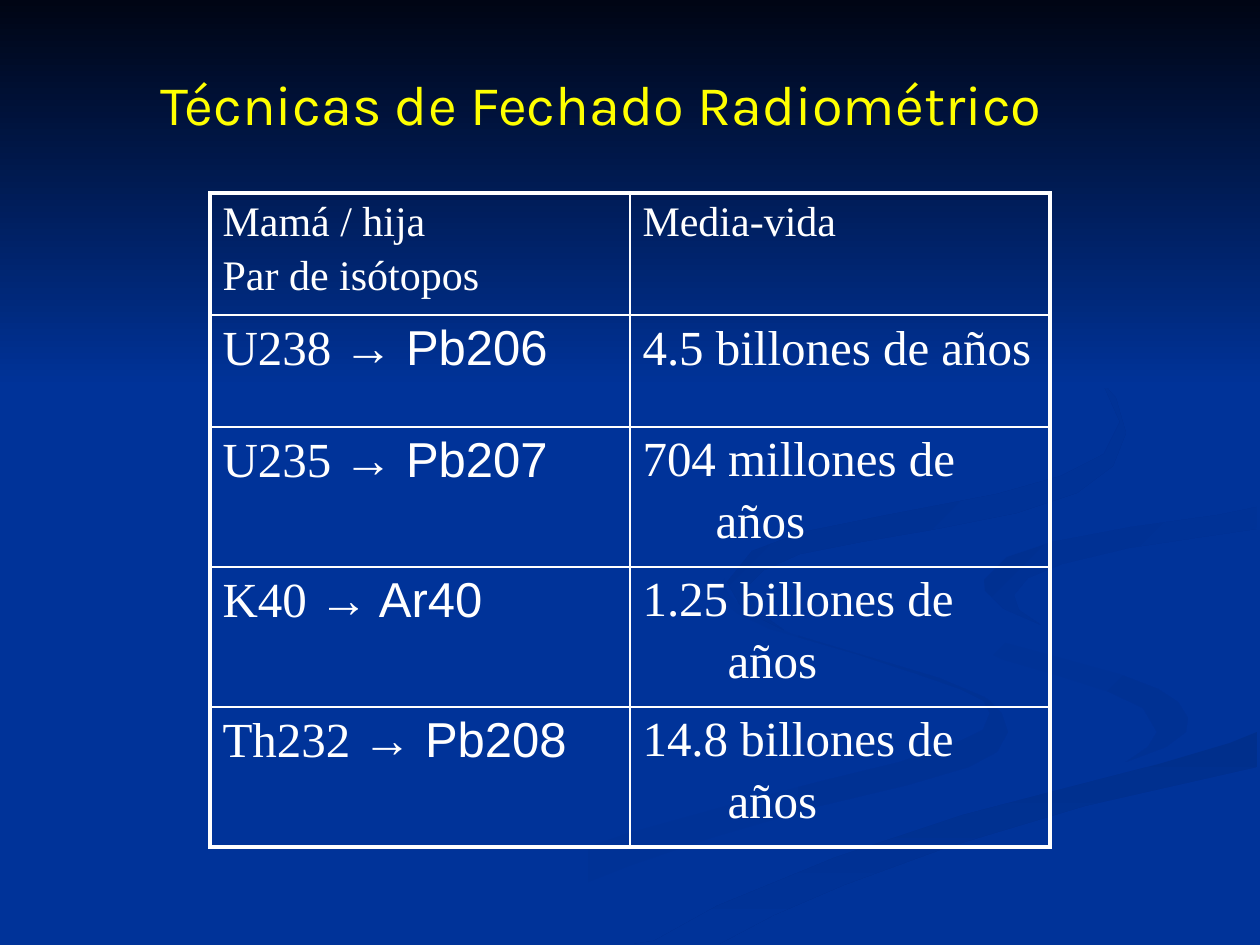
from lxml.etree import SubElement
from pptx import Presentation
from pptx.dml.color import RGBColor
from pptx.enum.text import MSO_ANCHOR, MSO_AUTO_SIZE, PP_ALIGN
from pptx.oxml.ns import qn
from pptx.util import Pt

PX = 914400 / 126
WHITE = "FFFFFF"
SERIF = "Times New Roman"
BLUE = "003399"


def rgb(code):
    return RGBColor.from_string(code)


def write(para, text, font=SERIF, size=28, color=WHITE, gap=0, indent=0):
    """Add a run to para, with gap in points before it and indent in px."""
    run = para.add_run()
    run.text = text
    run.font.name = font
    run.font.size = Pt(size)
    run.font.color.rgb = rgb(color)
    para.alignment = PP_ALIGN.LEFT
    para.space_before = Pt(gap)
    if indent:
        para._p.get_or_add_pPr().set("marL", str(round(indent * PX)))


deck = Presentation()
deck.slide_width = round(1260 * PX)
deck.slide_height = round(945 * PX)
slide = deck.slides.add_slide(deck.slide_layouts[5])
slide.background.fill.solid()
slide.background.fill.fore_color.rgb = rgb(BLUE)

# Ribbons and the dark band at the top: start colour, end colour, angle, outline
loop = [
    (984, 697), (939, 678), (859, 654), (789, 633), (748, 611), (730, 596),
    (723, 585), (725, 578), (718, 590), (721, 600), (738, 614), (770, 629),
    (856, 654), (917, 674), (960, 689), (984, 701), (990, 713), (983, 730),
    (956, 743), (900, 762), (822, 781), (730, 805), (629, 833), (525, 869),
    (426, 916), (378, 944), (455, 944), (543, 900), (629, 866), (711, 838),
    (820, 806), (908, 785), (969, 767), (997, 752), (1008, 732), (1002, 714),
    (990, 701)]
curl = [
    (1188, 718), (1178, 702), (1158, 689), (1119, 674), (1046, 654),
    (998, 641), (955, 627), (924, 609), (912, 585), (914, 597), (924, 615),
    (951, 636), (1004, 660), (1056, 675), (1109, 692), (1143, 708),
    (1157, 732), (1148, 747), (1126, 762), (1166, 747), (1186, 732)]
tail = [
    (654, 941), (634, 944), (719, 944), (774, 915), (844, 885), (948, 847),
    (1085, 806), (1257, 767), (1257, 732), (1230, 743), (1159, 764),
    (1047, 793), (963, 815), (834, 858), (717, 906)]
wing = [
    (984, 580), (985, 591), (1004, 609), (1041, 625), (1019, 610),
    (1014, 595), (1028, 578), (1062, 564), (1129, 548), (1202, 537),
    (1257, 529), (1257, 507), (1218, 515), (1131, 527), (1052, 542),
    (1007, 557)]
crest = [
    (861, 542), (931, 530), (1017, 513), (1077, 493), (1113, 466),
    (1126, 433), (1116, 398), (1089, 367), (1034, 329), (983, 304),
    (960, 294), (1014, 320), (1066, 352), (1104, 386), (1120, 422),
    (1104, 454), (1061, 476), (997, 494), (887, 515), (803, 532), (752, 551),
    (727, 582), (743, 610), (784, 630), (757, 611), (748, 586), (764, 570),
    (800, 554)]
band = [(0, 0), (0, 388), (1260, 388), (1260, 0)]

for start, end, angle, points in [
        (BLUE, "003193", 0, loop),
        (BLUE, "003193", 45, curl),
        ("002F8C", BLUE, 90, tail),
        ("003091", BLUE, 45, wing),
        ("002F8E", BLUE, 45, crest),
        ("000514", BLUE, 90, band)]:
    form = slide.shapes.build_freeform(*points[0], scale=PX)
    form.add_line_segments(points[1:], close=True)
    shape = form.convert_to_shape()
    shape.shadow.inherit = False
    shape.line.fill.background()
    shape.fill.gradient()
    shape.fill.gradient_angle = (360 - angle) % 360
    for stop, code in zip(shape.fill.gradient_stops, (start, end)):
        stop.color.rgb = rgb(code)

# Title, brought in front of the band
title = slide.shapes.title
slide.shapes.element.append(title.element)
title.left, title.top, title.width, title.height = (
    round(n * PX) for n in (148, 63, 914, 81))
frame = title.text_frame
frame.auto_size = MSO_AUTO_SIZE.NONE
frame.vertical_anchor = MSO_ANCHOR.TOP
write(frame.paragraphs[0], "Técnicas de Fechado Radiométrico",
      font="Karla", size=32, color="FFFF00")

# Isotope table: parent, daughter, half-life, second line and its indent
rows = [
    ("U238 ", "→ Pb206", "4.5 billones de años", "", 0),
    ("U235 ", "→ Pb207", "704 millones de", "años", 73),
    ("K40 ", "→ Ar40", "1.25 billones de", "años", 85),
    ("Th232 ", "→ Pb208", "14.8 billones de", "años", 85)]
tall = [122, 112, 140, 140, 140]
table = slide.shapes.add_table(
    len(tall), 2, *(round(n * PX) for n in (210, 193, 840, sum(tall)))).table
table.first_row = table.horz_banding = False
for row, high in zip(table.rows, tall):
    row.height = round(high * PX)

head = table.cell(0, 0).text_frame
write(head.paragraphs[0], "Mamá / hija", size=24)
write(head.add_paragraph(), "Par de isótopos", size=24, gap=4)
write(table.cell(0, 1).text_frame.paragraphs[0], "Media-vida", size=24)
for i, (parent, child, life, rest, indent) in enumerate(rows, 1):
    pair = table.cell(i, 0).text_frame.paragraphs[0]
    write(pair, parent)
    write(pair, child, font="Arial")
    span = table.cell(i, 1).text_frame
    write(span.paragraphs[0], life)
    if rest:
        write(span.add_paragraph(), rest, gap=4.4, indent=indent)

# Thick outer frame, thin inner lines
last = len(tall) - 1
for r in range(len(tall)):
    for c in range(2):
        cell = table.cell(r, c)
        props = cell._tc.get_or_add_tcPr()
        for side, outer in [("L", c == 0), ("R", c == 1),
                            ("T", r == 0), ("B", r == last)]:
            line = SubElement(props, qn("a:ln" + side),
                              w=str(Pt(2.25 if outer else 1)))
            SubElement(SubElement(line, qn("a:solidFill")),
                       qn("a:srgbClr"), val=WHITE)
        cell.fill.background()

deck.save("out.pptx")
